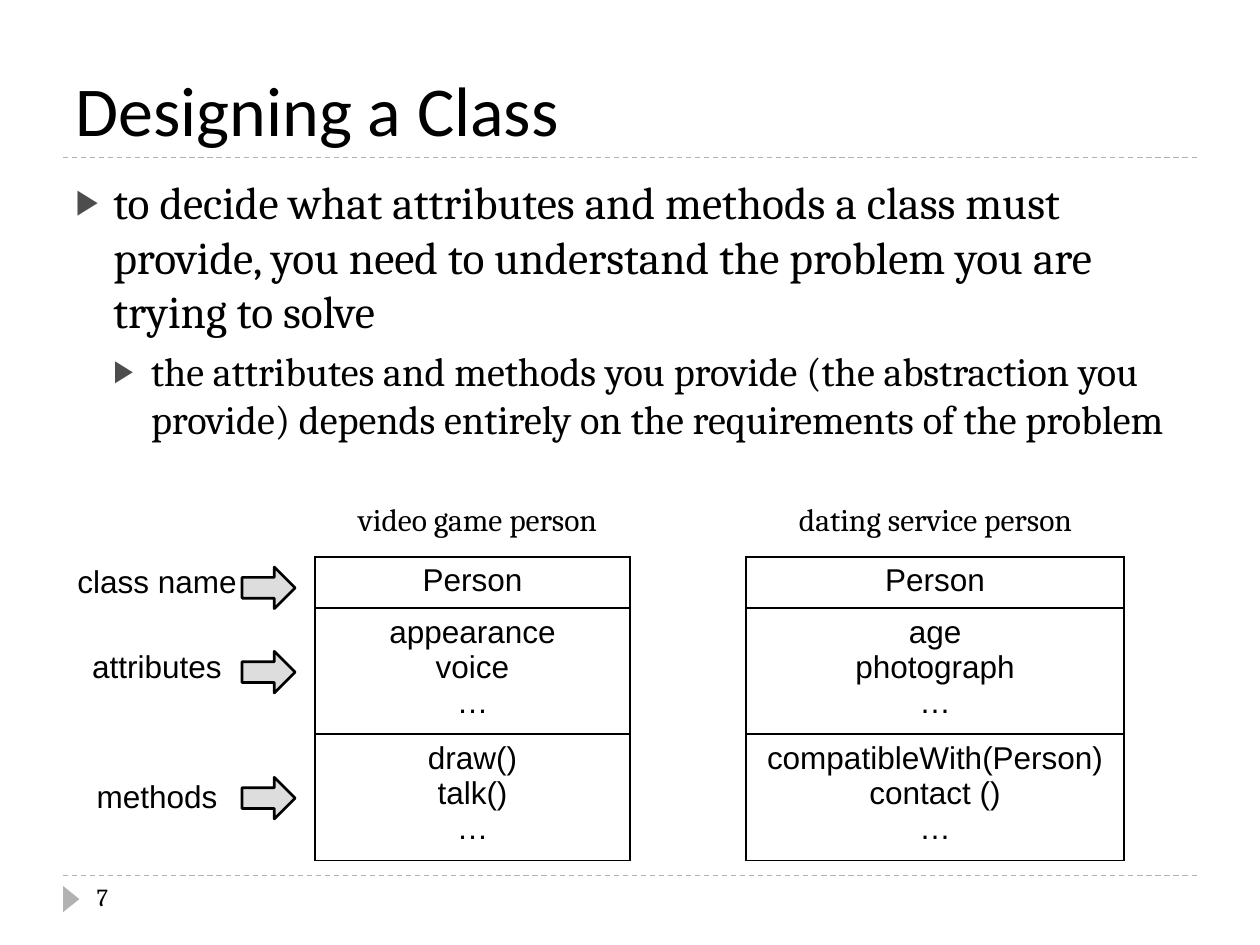
"""Build a slide on designing a class, comparing two Person abstractions."""
from lxml.etree import SubElement
from pptx import Presentation
from pptx.dml.color import RGBColor as Rgb
from pptx.enum.dml import MSO_LINE
from pptx.enum.shapes import MSO_CONNECTOR as Connector, MSO_SHAPE as Shape
from pptx.enum.text import MSO_ANCHOR as Anchor, MSO_AUTO_SIZE as AutoSize, PP_ALIGN as Align
from pptx.oxml.ns import qn
from pptx.util import Cm, Pt

THEME = {
    "ink": "000000", "rule": "B2B2B2", "bullet": "4D4D4D", "arrow": "DDDDDD",
    "title": {"name": "Calibri", "size": Pt(40)},
    "point": {"name": "Cambria", "size": Pt(26)},
    "subpoint": {"name": "Cambria", "size": Pt(23)},
    "caption": {"name": "Cambria", "size": Pt(18)},
    "number": {"name": "Cambria", "size": Pt(14)},
    "diagram": {"name": "Arial", "size": Pt(18)},
}
TITLE = "Designing a Class"
POINTS = [
    ("to decide what attributes and methods a class must provide, you need to "
     "understand the problem you are trying to solve", "point", 6),
    ("the attributes and methods you provide (the abstraction you provide) depends "
     "entirely on the requirements of the problem", "subpoint", 5),
]
PAGE_NUMBER = "7"
CAPTIONS = [("video game person", 6.78, 5.7), ("dating service person", 15.67, 6.38)]
ROW_HEIGHTS = [1.03, 2.39, 2.39]
CLASS_TABLES = [
    (6.35, 6.35, ROW_HEIGHTS, True,
     [["Person"], ["appearance", "voice", "…"], ["draw()", "talk()", "…"]]),
    (15.04, 7.62, ROW_HEIGHTS, True,
     [["Person"], ["age", "photograph", "…"], ["compatibleWith(Person)", "contact ()", "…"]]),
    (0.84, 4.65, [1.03, 2.39, 2.85], False, [["class name"], ["attributes"], ["methods"]]),
]
ARROW_TOPS = [11.43, 13.13, 15.67]
RULE_TOPS = [17.65, 3.18]
MARGIN, CONTENT_WIDTH, TABLE_TOP, INDENT = 1.27, 22.86, 11.23, 0.76


def box(*lengths):
    return [Cm(length) for length in lengths]


def place(part, *lengths):
    for side, length in zip(("left", "top", "width", "height"), box(*lengths)):
        setattr(part, side, length)


def write(paragraph, wording, style, **layout):
    run = paragraph.add_run()
    run.text = wording
    for key, value in THEME[style].items():
        setattr(run.font, key, value)
    run.font.color.rgb = Rgb.from_string(THEME["ink"])
    for key, value in layout.items():
        setattr(paragraph, key, value)


def add_color(parent, color):
    SubElement(SubElement(parent, qn("a:solidFill")), qn("a:srgbClr"), val=color)


def add_bullet(paragraph, level):
    properties = paragraph._p.get_or_add_pPr()
    properties.set("marL", str(Cm(INDENT * (level + 1))))
    properties.set("indent", str(-Cm(INDENT)))
    SubElement(SubElement(properties, qn("a:buClr")), qn("a:srgbClr"), val=THEME["bullet"])
    SubElement(properties, qn("a:buSzPct"), val="76000")
    SubElement(properties, qn("a:buFont"), typeface="Arial")
    SubElement(properties, qn("a:buChar"), char="▶")


def add_rule(slide, top):
    rule = slide.shapes.add_connector(
        Connector.STRAIGHT, *box(MARGIN, top, MARGIN + CONTENT_WIDTH, top))
    rule.line.color.rgb = Rgb.from_string(THEME["rule"])
    rule.line.width = Pt(0.75)
    rule.line.dash_style = MSO_LINE.DASH
    SubElement(rule._element.spPr, qn("a:effectLst"))


def add_preset(slide, preset, bounds, fill, line_width=0, rotation=0):
    preset_shape = slide.shapes.add_shape(preset, *box(*bounds))
    preset_shape.shadow.inherit = False
    preset_shape.rotation = rotation
    preset_shape.fill.solid()
    preset_shape.fill.fore_color.rgb = Rgb.from_string(THEME[fill])
    if line_width:
        preset_shape.line.color.rgb = Rgb.from_string(THEME["ink"])
        preset_shape.line.width = Pt(line_width)
    else:
        preset_shape.line.fill.background()


def add_label(slide, wording, style, bounds, align=Align.LEFT):
    frame = slide.shapes.add_textbox(*box(*bounds)).text_frame
    frame.word_wrap = True
    write(frame.paragraphs[0], wording, style, alignment=align)


def set_borders(cell, bordered):
    properties = cell._tc.get_or_add_tcPr()
    for side in ("lnL", "lnR", "lnT", "lnB"):
        border = SubElement(properties, qn(f"a:{side}"), w=str(Pt(1)))
        if bordered:
            add_color(border, THEME["ink"])
        else:
            SubElement(border, qn("a:noFill"))


def add_class_table(slide, left, width, heights, bordered, sections):
    bounds = box(left, TABLE_TOP, width, sum(heights))
    table = slide.shapes.add_table(len(sections), 1, *bounds).table
    table.first_row = table.horz_banding = False
    for row, height, entries in zip(table.rows, heights, sections):
        row.height = Cm(height)
        cell = row.cells[0]
        set_borders(cell, bordered)
        cell.fill.background()
        cell.vertical_anchor = Anchor.TOP if bordered else Anchor.MIDDLE
        frame = cell.text_frame
        for index, entry in enumerate(entries):
            paragraph = frame.add_paragraph() if index else frame.paragraphs[0]
            write(paragraph, entry, "diagram", alignment=Align.CENTER)


def fill_placeholders(slide):
    title, body = slide.placeholders
    place(title, MARGIN, 0.43, CONTENT_WIDTH, 2.74)
    place(body, MARGIN, 3.38, CONTENT_WIDTH, 13.72)
    for part, anchor in ((title, Anchor.BOTTOM), (body, Anchor.TOP)):
        part.text_frame.vertical_anchor = anchor
        part.text_frame.auto_size = AutoSize.NONE
    write(title.text_frame.paragraphs[0], TITLE, "title", alignment=Align.LEFT)
    for level, (wording, style, space) in enumerate(POINTS):
        frame = body.text_frame
        paragraph = frame.add_paragraph() if level else frame.paragraphs[0]
        write(paragraph, wording, style, level=level, space_before=Pt(space))
        add_bullet(paragraph, level)


def main():
    deck = Presentation()
    deck.slide_width, deck.slide_height = box(25.4, 19.05)
    slide = deck.slides.add_slide(deck.slide_layouts[1])
    fill_placeholders(slide)
    for top in RULE_TOPS:
        add_rule(slide, top)
    add_preset(slide, Shape.ISOSCELES_TRIANGLE, (1.17, 17.96, 0.53, 0.33), "rule", rotation=90)
    add_label(slide, PAGE_NUMBER, "number", (1.7, 17.65, 5.51, 1.02))
    for class_table in CLASS_TABLES:
        add_class_table(slide, *class_table)
    for wording, left, width in CAPTIONS:
        add_label(slide, wording, "caption", (left, 9.96, width, 1.02), Align.CENTER)
    for top in ARROW_TOPS:
        add_preset(slide, Shape.RIGHT_ARROW, (4.88, top, 1.07, 0.84), "arrow", line_width=1.5)
    deck.save("out.pptx")


if __name__ == "__main__":
    main()
